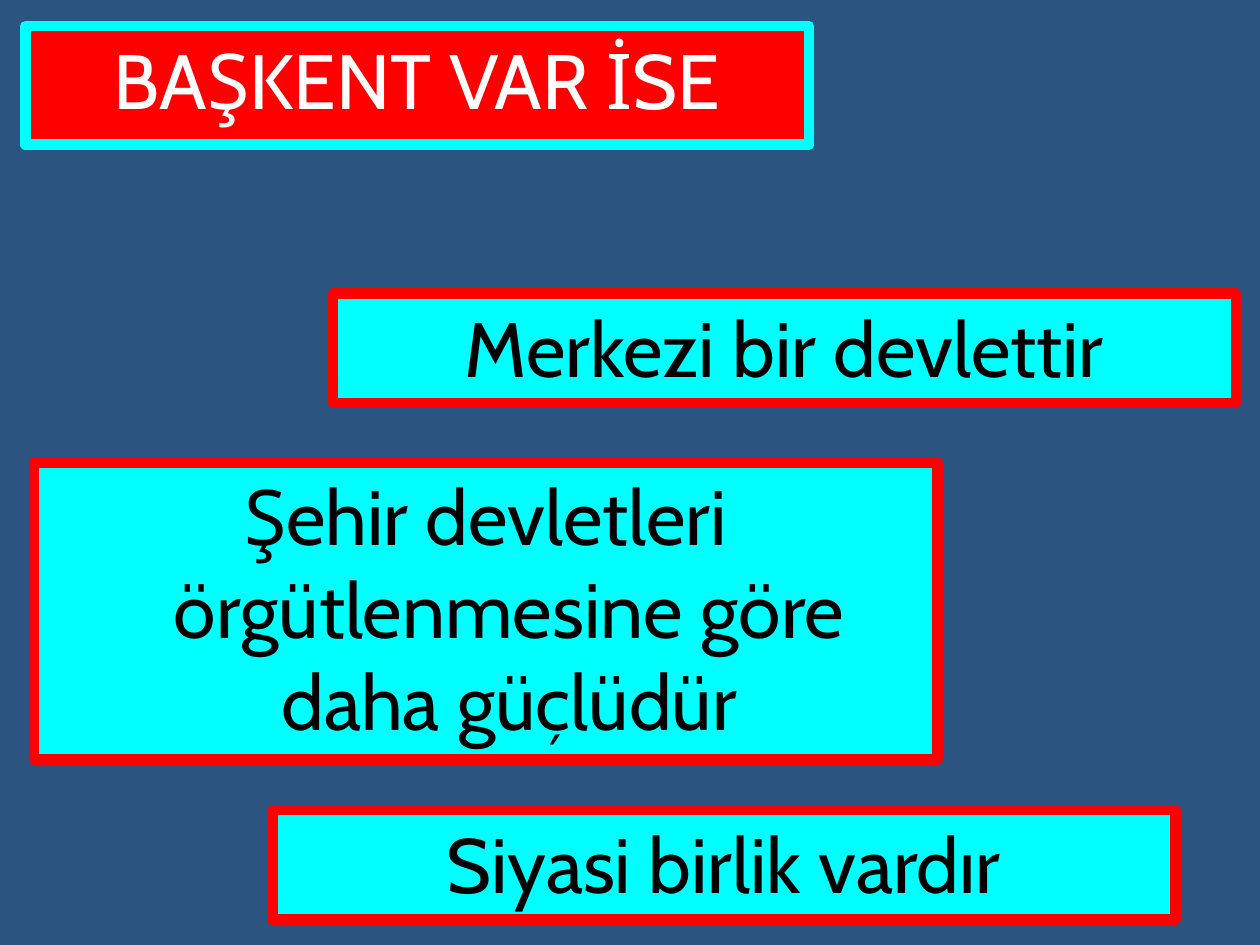
import pptx
import pptx.dml.color
import pptx.enum.shapes
import pptx.enum.text
import pptx.util

Cm = pptx.util.Cm
Pt = pptx.util.Pt
RGBColor = pptx.dml.color.RGBColor

NAVY = RGBColor(0x2B, 0x54, 0x81)
RED = RGBColor(0xFF, 0x00, 0x00)
CYAN = RGBColor(0x00, 0xFF, 0xFF)
WHITE = RGBColor(0xFF, 0xFF, 0xFF)
BLACK = RGBColor(0x00, 0x00, 0x00)

FONT_FORMAT = {"name": "Cabin", "size": Pt(44)}
FRAME_FORMAT = {
    "word_wrap": True,
    "vertical_anchor": pptx.enum.text.MSO_ANCHOR.TOP,
    "margin_left": Cm(0.25),
    "margin_right": Cm(0.25),
    "margin_top": Cm(0.13),
    "margin_bottom": Cm(0.13),
}
HANGING_INDENT = Cm(0.95)
RESULT_WIDTH = 18.21

# Wording, left, top and height in centimetres
RESULTS = [
    ("Merkezi bir devlettir", 6.71, 5.92, 2.21),
    ("Şehir devletleri örgütlenmesine göre daha güçlüdür", 0.69, 9.32, 5.99),
    ("Siyasi birlik vardır", 5.49, 16.33, 2.21),
]


def apply_format(target, values):
    for attribute, value in values.items():
        setattr(target, attribute, value)


def add_framed_text(slide, wording, position, fill, border, text_color):
    """Add a bordered box with centred, hanging-indented text."""
    box = slide.shapes.add_shape(
        pptx.enum.shapes.MSO_SHAPE.RECTANGLE, *(Cm(length) for length in position)
    )
    box.shadow.inherit = False
    box.fill.solid()
    box.fill.fore_color.rgb = fill
    box.line.color.rgb = border
    box.line.width = Pt(6)

    apply_format(box.text_frame, FRAME_FORMAT)
    paragraph = box.text_frame.paragraphs[0]
    paragraph.alignment = pptx.enum.text.PP_ALIGN.CENTER
    properties = paragraph._p.get_or_add_pPr()
    properties.set("marL", str(HANGING_INDENT))
    properties.set("indent", str(-HANGING_INDENT))
    run = paragraph.add_run()
    run.text = wording
    apply_format(run.font, FONT_FORMAT)
    run.font.color.rgb = text_color


def main():
    presentation = pptx.Presentation()
    presentation.slide_width = Cm(25.4)
    presentation.slide_height = Cm(19.05)
    slide = presentation.slides.add_slide(presentation.slide_layouts[6])
    slide.background.fill.solid()
    slide.background.fill.fore_color.rgb = NAVY

    heading_position = (0.51, 0.53, 15.8, 2.39)
    add_framed_text(slide, "BAŞKENT VAR İSE", heading_position, RED, CYAN, WHITE)
    for wording, left, top, height in RESULTS:
        position = (left, top, RESULT_WIDTH, height)
        add_framed_text(slide, wording, position, CYAN, RED, BLACK)

    presentation.save("out.pptx")


if __name__ == "__main__":
    main()
